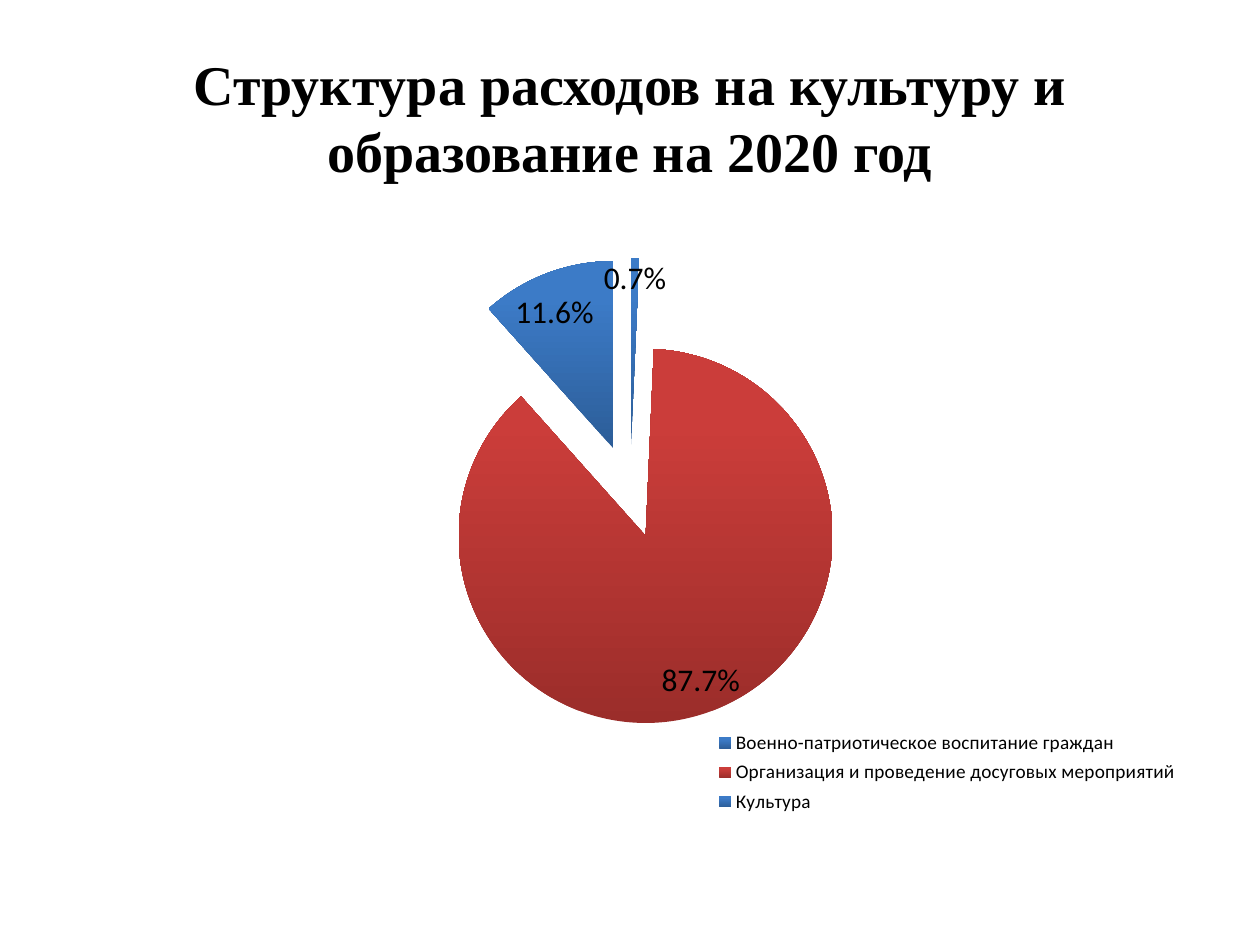
import pptx
import pptx.util
import pptx.chart.data
import pptx.dml.color
import pptx.enum.chart
import pptx.enum.text
import pptx.oxml
from pptx.util import Cm

# Content
TITLE = "Структура расходов на культуру и образование на 2020 год"
COSTS = [  # name, share in percent, slice shade, label shift
    ("Военно-патриотическое воспитание граждан", 0.7, "blue", (0, -0.01)),
    ("Организация и проведение досуговых мероприятий", 87.7, "red",
     (0.03, -0.01)),
    ("Культура", 11.6, "blue", (-0.03, 0.02)),
]
HUES = {
    "text": "000000",
    "blue": ("2C5D98", "3C7BC7"),  # dark, light
    "red": ("9B2D2A", "CB3D3A"),
}
EDGE, WIDE = Cm(1.27), Cm(22.86)
PLOT = (0, 0.06, 1, 0.75)
KEY = (0.57, 0.81, 0.42, 0.15)
SPACE = "http://schemas.openxmlformats.org/drawingml/2006/chart"


def rgb(code):
    return pptx.dml.color.RGBColor.from_string(code)


def style(font, size, name="Calibri", bold=False):
    font.size, font.name, font.bold = pptx.util.Pt(size), name, bold
    font.color.rgb = rgb(HUES["text"])


def write(slide, text, box, **form):
    frame = slide.shapes.add_textbox(*box).text_frame
    frame.word_wrap = True
    frame.vertical_anchor = pptx.enum.text.MSO_ANCHOR.MIDDLE
    para = frame.paragraphs[0]
    para.alignment = pptx.enum.text.PP_ALIGN.CENTER
    run = para.add_run()
    run.text = text
    style(run.font, **form)


def place(node, rect, index, modes=()):
    for old in node.findall(pptx.oxml.ns.qn("c:layout")):
        node.remove(old)
    parts = list(modes) + list(zip("xywh", rect))
    body = "".join(f'<c:{tag} val="{val}"/>' for tag, val in parts)
    node.insert(index, pptx.oxml.parse_xml(
        f'<c:layout xmlns:c="{SPACE}"><c:manualLayout>{body}'
        "</c:manualLayout></c:layout>"))


deck = pptx.Presentation()
deck.slide_width, deck.slide_height = Cm(25.4), Cm(19.05)
slide = deck.slides.add_slide(deck.slide_layouts[6])

# Title
write(slide, TITLE, (EDGE, Cm(0.76), WIDE, Cm(3.18)),
      size=32, name="Times New Roman", bold=True)

# Pie chart
data = pptx.chart.data.CategoryChartData()
data.categories = [cost[0] for cost in COSTS]
data.add_series("Series 1", [cost[1] for cost in COSTS])
chart = slide.shapes.add_chart(
    pptx.enum.chart.XL_CHART_TYPE.PIE_EXPLODED,
    EDGE, Cm(4.45), WIDE, Cm(12.57), data).chart
style(chart.font, 18)
chart.has_title = False
fixed = [("xMode", "edge"), ("yMode", "edge")]
place(chart._chartSpace.chart.plotArea, PLOT, 0,
      [("layoutTarget", "inner")] + fixed)

# Percent labels
pie = chart.plots[0]
pie.vary_by_categories = True
row = pie.series[0]
inside = pptx.enum.chart.XL_LABEL_POSITION.INSIDE_END
tags = row.data_labels
tags.show_percentage, tags.show_value = True, False
tags.number_format, tags.number_format_is_linked = "0.0%", False
tags.position = inside
style(tags.font, 18)

# Slices, each with its label moved clear of the others
for burst in row._element.findall(pptx.oxml.ns.qn("c:explosion")):
    burst.set("val", "25")
for index, (_, _, shade, shift) in enumerate(COSTS):
    point = row.points[index]
    fill = point.format.fill
    fill.gradient()
    fill.gradient_angle = 90
    for stop, hue, spot in zip(fill.gradient_stops, HUES[shade], (0, 0.8)):
        stop.color.rgb, stop.position = rgb(hue), spot
    style(point.data_label.font, 18)
    point.data_label.position = inside
    label = row._element.xpath(f"c:dLbls/c:dLbl[c:idx/@val={index}]")[0]
    place(label, shift, 1)
    label.insert(2, pptx.oxml.parse_xml(
        f'<c:numFmt xmlns:c="{SPACE}" formatCode="0.0%" sourceLinked="0"/>'))
    for tag, val in (("showVal", "0"), ("showPercent", "1")):
        label.find(pptx.oxml.ns.qn(f"c:{tag}")).set("val", val)
for line in row._element.xpath("c:dLbls/c:showLeaderLines"):
    line.set("val", "0")

# Legend
chart.has_legend = True
chart.legend.position = pptx.enum.chart.XL_LEGEND_POSITION.TOP
chart.legend.include_in_layout = False
style(chart.legend.font, 11)
place(chart.legend._element, KEY, 1, fixed)

deck.save("out.pptx")
